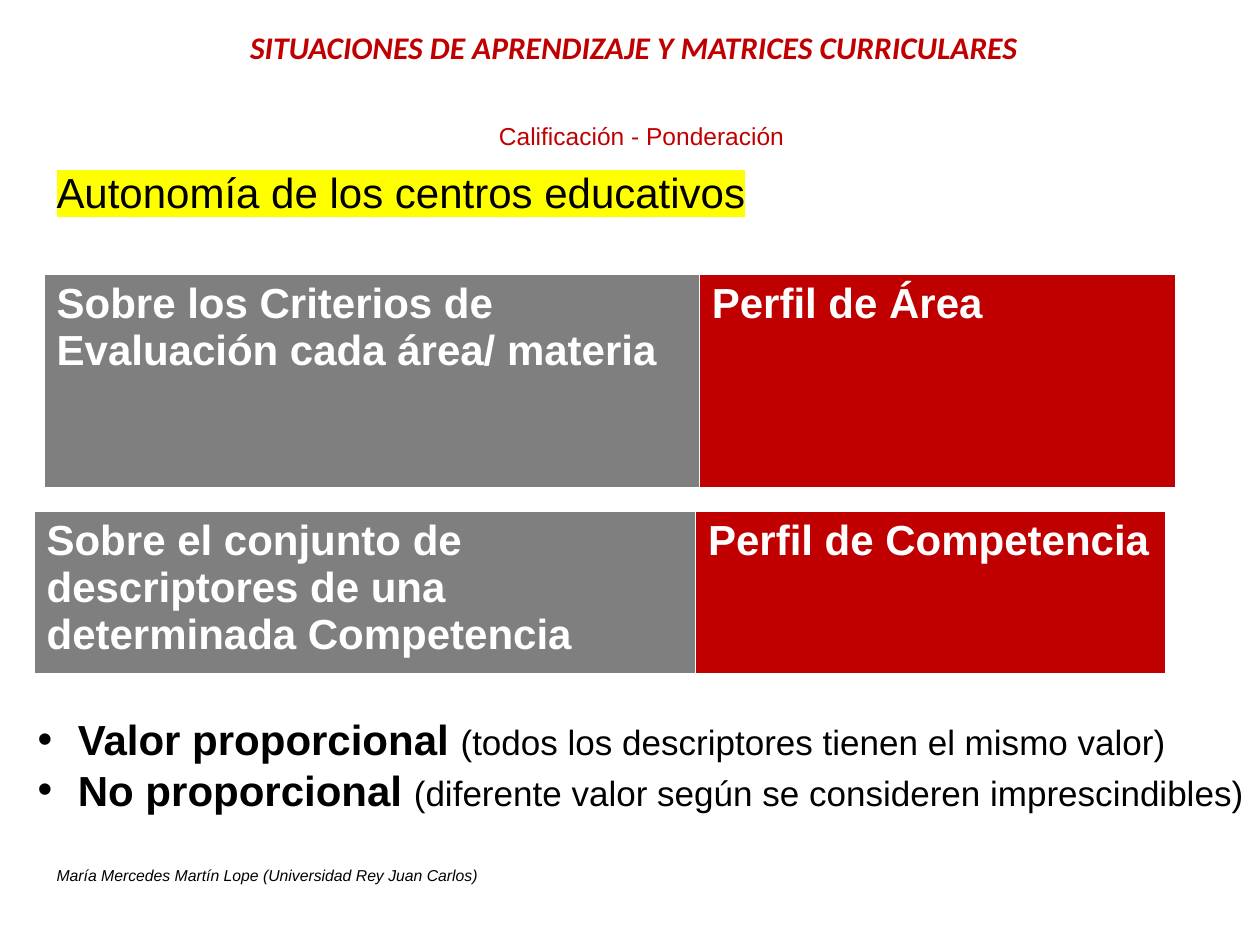
from dataclasses import dataclass

import lxml.etree
import pptx
import pptx.dml.color
import pptx.enum.text
import pptx.oxml.ns
import pptx.util

Inches = pptx.util.Inches
Pt = pptx.util.Pt
Align = pptx.enum.text.PP_ALIGN
Anchor = pptx.enum.text.MSO_ANCHOR

RED, GRAY, WHITE, BLACK, YELLOW = "C00000", "7F7F7F", "FFFFFF", "000000", "FFFF00"


@dataclass
class Run:
    text: str
    size: int
    color: str = BLACK
    bold: bool = False
    italic: bool = False
    font: str = "Arial"
    highlight: str = ""


@dataclass
class TextBox:
    box: tuple[float, float, float, float]
    paragraphs: list[list[Run]]
    alignment: Align = Align.LEFT
    anchor: Anchor = Anchor.TOP
    bulleted: bool = False


@dataclass
class ProfileTable:
    box: tuple[float, float, float, float]
    first_width: float
    scope: str
    profile: str


TEXT_BOXES = [
    TextBox((0.12, 0.91, 10, 0.55), [[Run("Calificación - Ponderación ", 14, RED)]],
            Align.CENTER),
    TextBox((0.35, 1.27, 8.98, 0.5),
            [[Run("Autonomía de los centros educativos", 24, highlight=YELLOW)]],
            Align.JUSTIFY, Anchor.MIDDLE),
    TextBox((0.2, 5.61, 9.8, 0.91),
            [[Run("Valor proporcional ", 24, bold=True),
              Run("(todos los descriptores tienen el mismo valor)", 20)],
             [Run("No proporcional ", 24, bold=True),
              Run("(diferente valor según se consideren imprescindibles)", 20)]],
            anchor=Anchor.MIDDLE, bulleted=True),
    TextBox((0.35, 6.82, 8.11, 0.25),
            [[Run("María Mercedes Martín Lope (Universidad Rey Juan Carlos)", 9, italic=True)]]),
]

TABLES = [
    ProfileTable((0.35, 2.18, 8.98, 1.7), 5.2,
                 "Sobre los Criterios de Evaluación cada área/ materia", "Perfil de Área"),
    ProfileTable((0.27, 4.06, 8.98, 1.3), 5.25,
                 "Sobre el conjunto de descriptores de una determinada Competencia",
                 "Perfil de Competencia"),
]


def rgb(color: str) -> pptx.dml.color.RGBColor:
    return pptx.dml.color.RGBColor.from_string(color)


def add_child(parent, tag: str, **attributes: str):
    return lxml.etree.SubElement(parent, pptx.oxml.ns.qn(tag), **attributes)


def add_run(paragraph, run: Run) -> None:
    text_run = paragraph.add_run()
    text_run.text = run.text
    font = text_run.font
    font.size = Pt(run.size)
    font.bold = run.bold
    font.italic = run.italic
    font.color.rgb = rgb(run.color)
    if run.highlight:
        properties = text_run._r.get_or_add_rPr()
        add_child(add_child(properties, "a:highlight"), "a:srgbClr", val=run.highlight)
    font.name = run.font


def add_bullet(paragraph) -> None:
    properties = paragraph._p.get_or_add_pPr()
    properties.set("marL", str(Inches(0.32)))
    properties.set("indent", str(-Inches(0.32)))
    add_child(properties, "a:buFont", typeface="Arial")
    add_child(properties, "a:buChar", char="•")


def add_text_box(slide, item: TextBox) -> None:
    shape = slide.shapes.add_textbox(*map(Inches, item.box))
    frame = shape.text_frame
    frame.word_wrap = True
    frame.vertical_anchor = item.anchor
    for index, runs in enumerate(item.paragraphs):
        paragraph = frame.add_paragraph() if index else frame.paragraphs[0]
        paragraph.alignment = item.alignment
        if item.bulleted:
            add_bullet(paragraph)
        for run in runs:
            add_run(paragraph, run)


def fill_cell(cell, text: str, color: str) -> None:
    properties = cell._tc.get_or_add_tcPr()
    for tag, width in (("a:lnL", 1), ("a:lnR", 1), ("a:lnT", 1), ("a:lnB", 3)):
        line = add_child(properties, tag, w=str(Pt(width)))
        add_child(add_child(line, "a:solidFill"), "a:srgbClr", val=WHITE)
    cell.fill.solid()
    cell.fill.fore_color.rgb = rgb(color)
    add_run(cell.text_frame.paragraphs[0], Run(text, 24, WHITE, bold=True))


def add_profile_table(slide, item: ProfileTable) -> None:
    table = slide.shapes.add_table(1, 2, *map(Inches, item.box)).table
    table.horz_banding = False
    table.columns[0].width = Inches(item.first_width)
    table.columns[1].width = Inches(item.box[2] - item.first_width)
    fill_cell(table.cell(0, 0), item.scope, GRAY)
    fill_cell(table.cell(0, 1), item.profile, RED)


def format_title(title) -> None:
    title.left, title.top, title.width, title.height = map(Inches, (0.12, -0.1, 9.76, 0.94))
    frame = title.text_frame
    frame.word_wrap = True
    frame.auto_size = pptx.enum.text.MSO_AUTO_SIZE.NONE
    frame.vertical_anchor = Anchor.MIDDLE
    frame.margin_left = frame.margin_top = frame.margin_bottom = Inches(0.03)
    frame.margin_right = Inches(0.01)
    paragraph = frame.paragraphs[0]
    paragraph.alignment = Align.CENTER
    paragraph._p.get_or_add_pPr().set("marL", str(Inches(0.04)))
    add_run(paragraph, Run("SITUACIONES DE APRENDIZAJE Y MATRICES CURRICULARES", 18, RED,
                           bold=True, italic=True, font="Calibri"))


def main() -> None:
    presentation = pptx.Presentation()
    presentation.slide_width = Inches(10)
    presentation.slide_height = Inches(7.5)
    slide = presentation.slides.add_slide(presentation.slide_layouts.get_by_name("Title Only"))
    format_title(slide.shapes.title)
    for text_box in TEXT_BOXES:
        add_text_box(slide, text_box)
    for table in TABLES:
        add_profile_table(slide, table)
    presentation.save("out.pptx")


if __name__ == "__main__":
    main()
